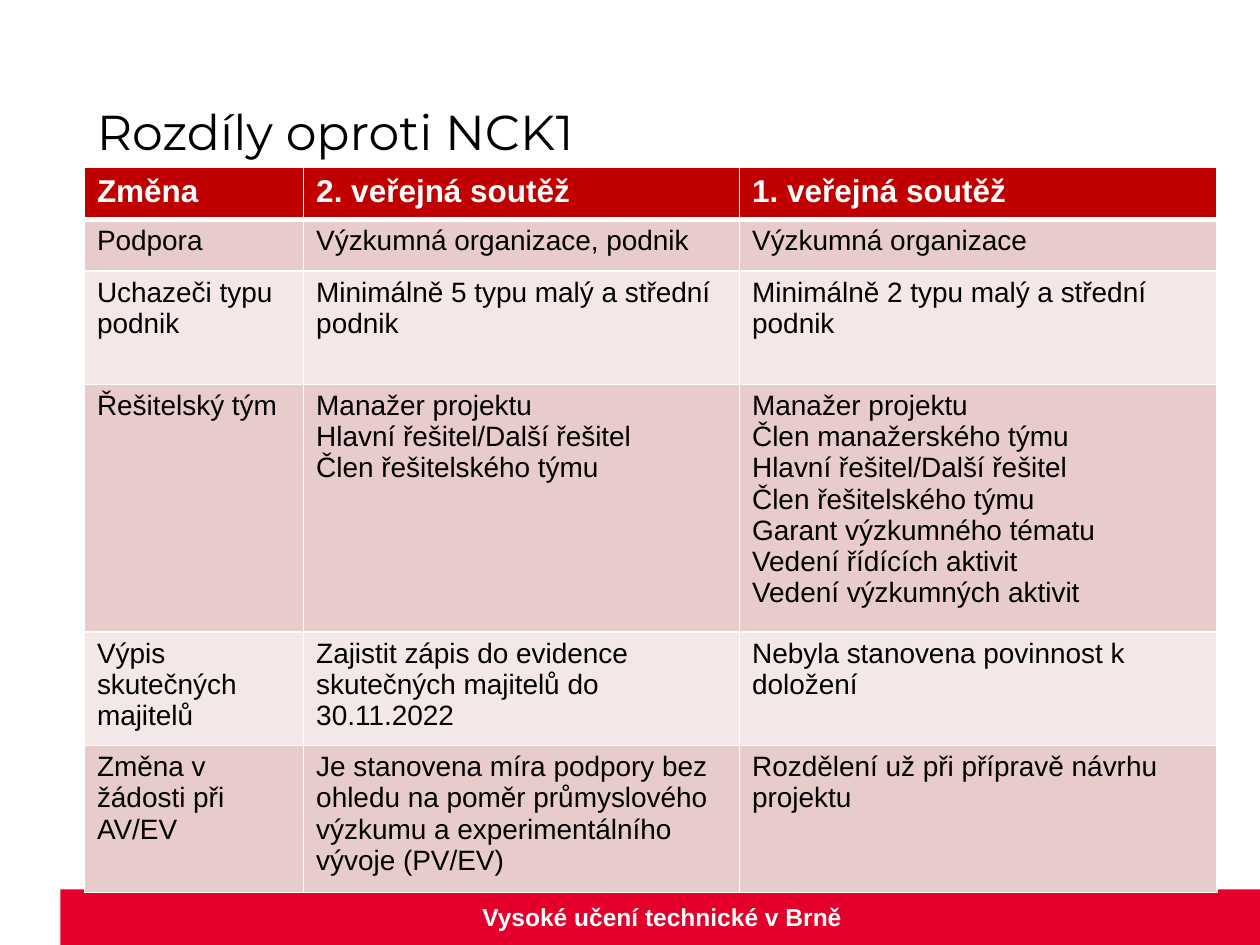
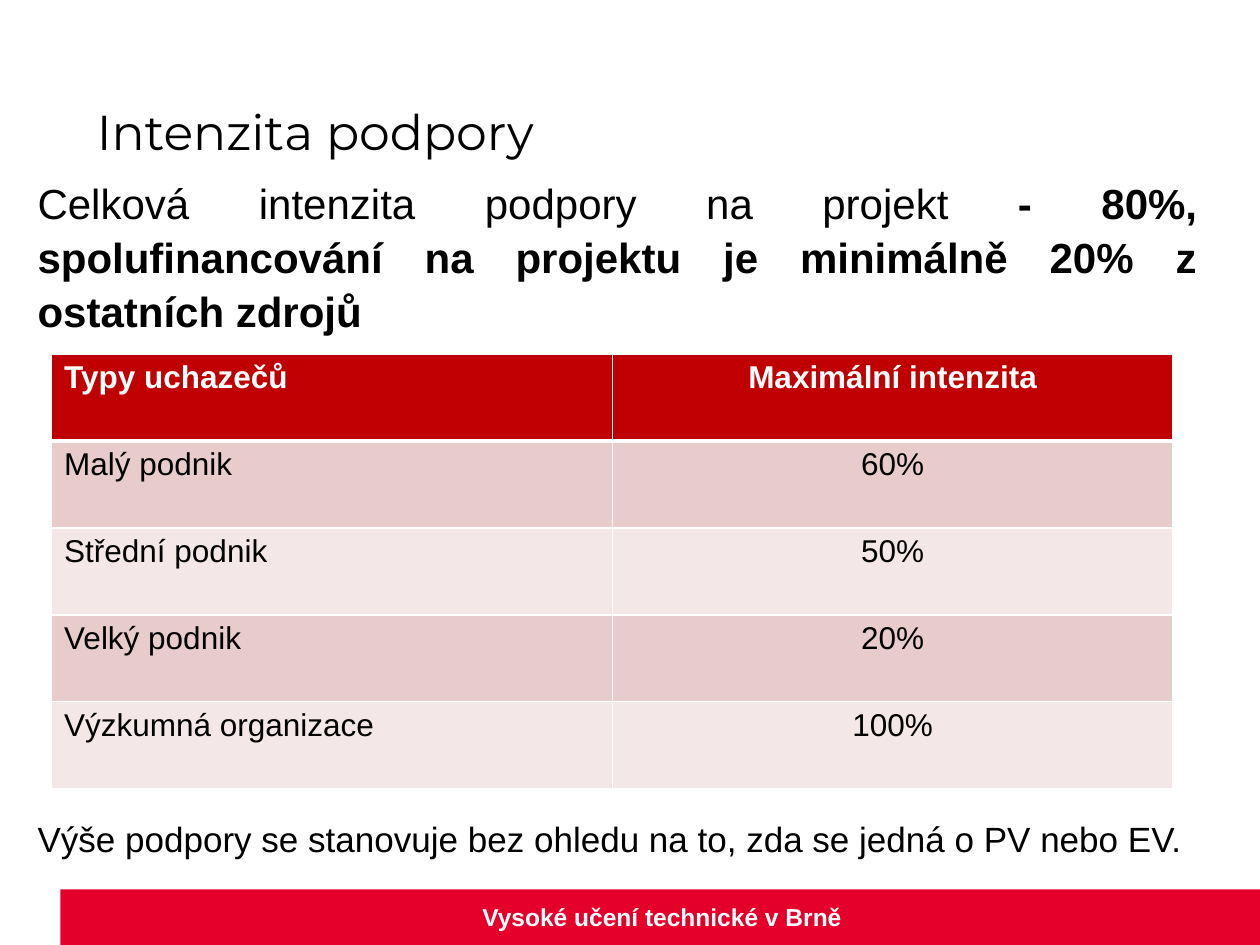
from typing import NamedTuple

from lxml.etree import SubElement
from pptx import Presentation
from pptx.dml.color import RGBColor
from pptx.enum.shapes import MSO_SHAPE as Shape
from pptx.enum.text import MSO_AUTO_SIZE as AutoSize, PP_ALIGN as Align
from pptx.oxml.ns import qn
from pptx.util import Inches, Pt

BLACK, WHITE = "000000", "FFFFFF"
FOOTER_RED, HEADER_RED = "E4002B", "C00000"
BANDS = ("E8CCCC", "F4E7E7")
BODY_FONT, TITLE_FONT = "Arial", "Montserrat"
FOOTER_TEXT = "Vysoké učení technické v Brně"


class Area(NamedTuple):
    """Position and size in inches."""

    left: float
    top: float
    width: float
    height: float

    def lengths(self) -> list:
        """Return the four values as lengths."""
        return [Inches(value) for value in self]


class Style(NamedTuple):
    """Look of a piece of text."""

    size: float
    color: str = BLACK
    bold: bool = False
    font: str = BODY_FONT


class Grid(NamedTuple):
    """Table with its column widths, row heights and column alignments."""

    left: float
    top: float
    columns: list[float]
    heights: list[float]
    aligns: list
    body_size: float
    rows: list[tuple[str, ...]]


TITLE_STYLE = Style(28, font=TITLE_FONT)
FOOTER_STYLE = Style(14, WHITE, True)
HEADER_STYLE = Style(18, WHITE, True)

DIFFERENCES = Grid(
    0.67, 1.33, [1.74, 3.46, 3.79], [0.41, 0.41, 0.9, 1.96, 0.9, 1.16],
    [Align.LEFT] * 3, 16,
    [
        ("Změna", "2. veřejná soutěž", "1. veřejná soutěž"),
        ("Podpora", "Výzkumná organizace, podnik", "Výzkumná organizace"),
        ("Uchazeči typu podnik",
         "Minimálně 5 typu malý a střední podnik",
         "Minimálně 2 typu malý a střední podnik"),
        ("Řešitelský tým",
         "Manažer projektu\nHlavní řešitel/Další řešitel\nČlen řešitelského týmu",
         "Manažer projektu\nČlen manažerského týmu\nHlavní řešitel/Další řešitel\n"
         "Člen řešitelského týmu\nGarant výzkumného tématu\n"
         "Vedení řídících aktivit\nVedení výzkumných aktivit"),
        ("Výpis skutečných majitelů",
         "Zajistit zápis do evidence skutečných majitelů do 30.11.2022",
         "Nebyla stanovena povinnost k doložení"),
        ("Změna v žádosti při AV/EV",
         "Je stanovena míra podpory bez ohledu na poměr průmyslového výzkumu "
         "a experimentálního vývoje (PV/EV)",
         "Rozdělení už při přípravě návrhu projektu"),
    ],
)

INTENSITIES = Grid(
    0.41, 2.81, [4.45] * 2, [0.69] * 5, [Align.LEFT, Align.CENTER], 18,
    [
        ("Typy uchazečů", "Maximální intenzita"),
        ("Malý podnik", "60%"),
        ("Střední podnik", "50%"),
        ("Velký podnik", "20%"),
        ("Výzkumná organizace", "100%"),
    ],
)


def rgb(color: str) -> RGBColor:
    """Turn a hex string into a colour."""
    return RGBColor.from_string(color)


def style_span(span, style: Style) -> None:
    """Format one run."""
    span.font.name = style.font
    span.font.size = Pt(style.size)
    span.font.bold = style.bold
    span.font.color.rgb = rgb(style.color)


def fill_frame(frame, text: str, style: Style, align=Align.LEFT) -> None:
    """Write text into a frame and format all its runs."""
    frame.text = text
    for para in frame.paragraphs:
        para.alignment = align
        for span in para.runs:
            style_span(span, style)


def add_text(page, area: Area, text: str, style: Style, align=Align.LEFT) -> None:
    """Add a wrapping text box that grows with its text."""
    frame = page.shapes.add_textbox(*area.lengths()).text_frame
    frame.word_wrap = True
    frame.auto_size = AutoSize.SHAPE_TO_FIT_TEXT
    fill_frame(frame, text, style, align)


def add_page(deck, title: str):
    """Add a page with the footer band and a title."""
    page = deck.slides.add_slide(deck.slide_layouts[6])
    band = page.shapes.add_shape(Shape.RECTANGLE, *Area(0.48, 7.06, 9.52, 0.44).lengths())
    band.shadow.inherit = False
    band.fill.solid()
    band.fill.fore_color.rgb = rgb(FOOTER_RED)
    band.line.fill.background()
    add_text(page, Area(0.51, 7.11, 9.49, 0.34), FOOTER_TEXT, FOOTER_STYLE, Align.CENTER)
    add_text(page, Area(0.67, 0.76, 8.03, 0.57), title, TITLE_STYLE)
    return page


def add_borders(cell, top: float, bottom: float) -> None:
    """Draw white borders around a cell, with widths in points."""
    properties = cell._tc.get_or_add_tcPr()
    for side, width in (("L", 1), ("R", 1), ("T", top), ("B", bottom)):
        line = SubElement(properties, qn(f"a:ln{side}"), w=str(Pt(width)))
        SubElement(SubElement(line, qn("a:solidFill")), qn("a:srgbClr"), val=WHITE)


def add_grid(page, grid: Grid) -> None:
    """Add a table with a red header and alternating bands."""
    area = Area(grid.left, grid.top, sum(grid.columns), sum(grid.heights))
    table = page.shapes.add_table(
        len(grid.rows), len(grid.columns), *area.lengths()).table
    for column, width in zip(table.columns, grid.columns):
        column.width = Inches(width)
    for index, texts in enumerate(grid.rows):
        table.rows[index].height = Inches(grid.heights[index])
        is_header = index == 0
        style = HEADER_STYLE if is_header else Style(grid.body_size)
        color = HEADER_RED if is_header else BANDS[(index - 1) % 2]
        for cell, text, align in zip(table.rows[index].cells, texts, grid.aligns):
            add_borders(cell, 3 if index == 1 else 1, 3 if is_header else 1)
            cell.fill.solid()
            cell.fill.fore_color.rgb = rgb(color)
            fill_frame(cell.text_frame, text, style, align)


def add_intensity_text(page) -> None:
    """Add the statement above the table and the remark below it."""
    box = page.shapes.add_textbox(*Area(0.2, 1.33, 9.4, 5.7).lengths())
    frame = box.text_frame
    frame.word_wrap = True
    statement, remark = frame.paragraphs[0], frame.add_paragraph()
    parts = [
        (statement, "Celková intenzita podpory na projekt", Style(24)),
        (statement, " - 80%, spolufinancování na projektu je minimálně 20% "
                    "z ostatních zdrojů", Style(24, bold=True)),
        (remark, "Výše podpory se stanovuje bez ohledu na to, zda se jedná "
                 "o PV nebo EV.", Style(20)),
    ]
    for para, text, style in parts:
        span = para.add_run()
        span.text = text
        style_span(span, style)
    for para in frame.paragraphs:
        para.alignment = Align.JUSTIFY
        para.line_spacing = 1.07
    remark.space_before = Pt(274)


def main() -> None:
    """Build and save the deck."""
    deck = Presentation()
    deck.slide_width, deck.slide_height = Inches(10), Inches(7.5)
    add_grid(add_page(deck, "Rozdíly oproti NCK1"), DIFFERENCES)
    page = add_page(deck, "Intenzita podpory")
    add_intensity_text(page)
    add_grid(page, INTENSITIES)
    deck.save("out.pptx")


if __name__ == "__main__":
    main()
